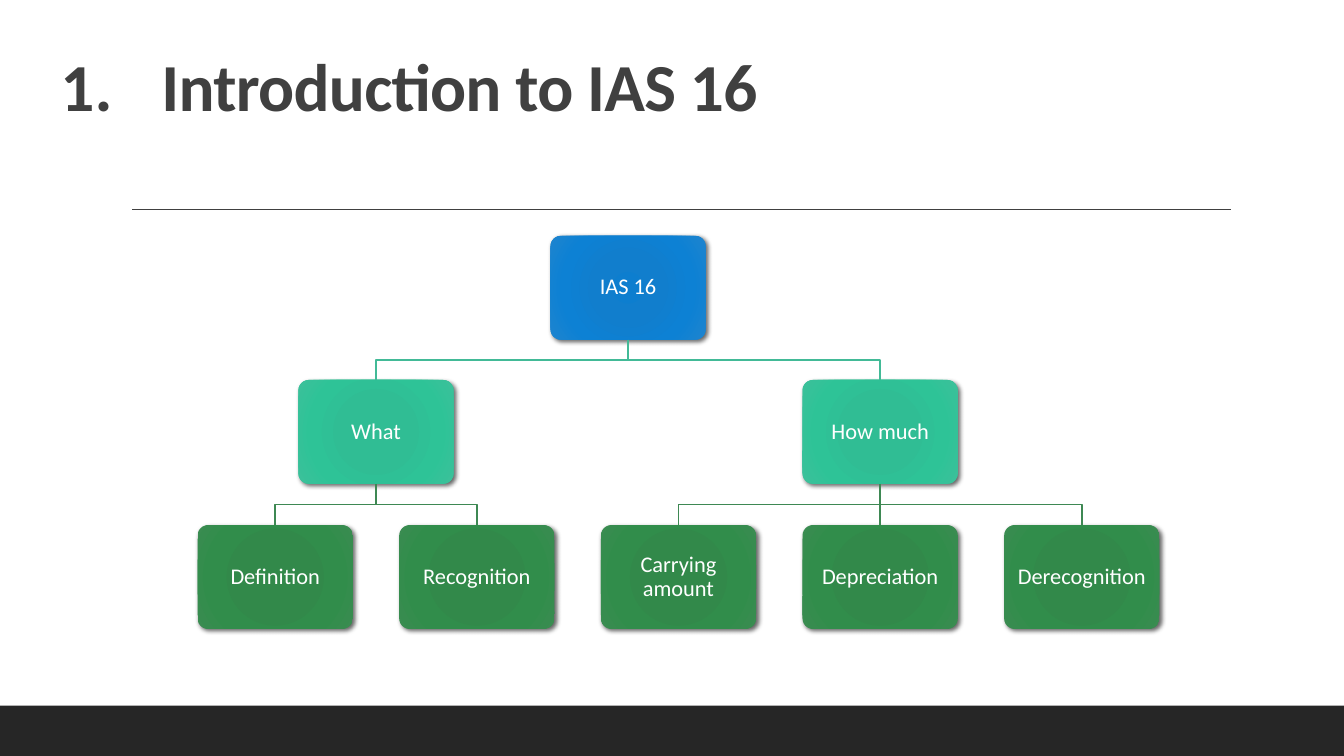
from lxml import etree
from pptx import Presentation
from pptx.dml.color import RGBColor
from pptx.enum.shapes import MSO_CONNECTOR, MSO_SHAPE
from pptx.enum.text import MSO_ANCHOR, MSO_AUTO_SIZE, PP_ALIGN
from pptx.oxml import parse_xml
from pptx.oxml.ns import qn
from pptx.util import Inches, Pt

STRAIGHT = MSO_CONNECTOR.STRAIGHT
RECTANGLE, ROUNDED = MSO_SHAPE.RECTANGLE, MSO_SHAPE.ROUNDED_RECTANGLE
MIDDLE, BOTTOM = MSO_ANCHOR.MIDDLE, MSO_ANCHOR.BOTTOM
LEFT, CENTER = PP_ALIGN.LEFT, PP_ALIGN.CENTER
NO_AUTOFIT = MSO_AUTO_SIZE.NONE
BOTTOM_SIDE, TOP_SIDE = 2, 0

WHITE = RGBColor(0xFF, 0xFF, 0xFF)
DARK_GREY = RGBColor(0x40, 0x40, 0x40)
BAND_GREY = RGBColor(0x26, 0x26, 0x26)
TEAL_LINE = RGBColor(0x42, 0xBA, 0x97)
GREEN_LINE = RGBColor(0x3E, 0x88, 0x53)

# One gradient per level of the tree, and one line colour below each parent level
GRADIENT_STOPS = (0, 34, 70, 100)
LEVEL_GRADIENTS = (
    [RGBColor.from_string(c) for c in ("0D7ECF", "117ECD", "0D81D4", "1E84CE")],
    [RGBColor.from_string(c) for c in ("2DBE94", "30BD94", "2EC397", "3CC09A")],
    [RGBColor.from_string(c) for c in ("2F8949", "32894A", "318D4B", "3A8C51")],
)
LEVEL_LINES = (TEAL_LINE, GREEN_LINE)
LEVEL_TOPS = (2.34, 3.77, 5.21)
BOX_WIDTH, BOX_HEIGHT = 1.54, 1.03
FIRST_LEAF_CENTER, LEAF_PITCH = 2.73, 2

TREE = ("IAS 16", [
    ("What", [("Definition", []), ("Recognition", [])]),
    ("How much", [("Carrying amount", []), ("Depreciation", []), ("Derecognition", [])]),
])

NAMESPACE = 'xmlns:a="http://schemas.openxmlformats.org/drawingml/2006/main"'
SHADOW = (f'<a:effectLst {NAMESPACE}><a:outerShdw blurRad="{Pt(3.5)}" dist="{Pt(2)}" '
          'dir="2700000" algn="ctr" rotWithShape="0"><a:srgbClr val="000000">'
          '<a:alpha val="60000"/></a:srgbClr></a:outerShdw></a:effectLst>')


def set_attributes(target, formats):
    for name, value in formats.items():
        setattr(target, name, value)


def format_font(font, size, color, bold=False):
    set_attributes(font, {"name": "Calibri", "size": Pt(size), "bold": bold})
    font.color.rgb = color


def add_title(slide, text):
    title = slide.shapes.title
    set_attributes(title, {"left": Inches(0.5), "top": Inches(-0.29),
                           "width": Inches(11), "height": Inches(1.59)})
    frame = title.text_frame
    set_attributes(frame, {"text": text, "vertical_anchor": BOTTOM,
                           "word_wrap": True, "auto_size": NO_AUTOFIT})
    paragraph = frame.paragraphs[0]
    set_attributes(paragraph, {"alignment": LEFT, "line_spacing": 0.9})
    # Automatic number with a hanging indent
    properties = paragraph._p.get_or_add_pPr()
    properties.set("marL", str(Inches(1)))
    properties.set("indent", str(Inches(-1)))
    etree.SubElement(properties, qn("a:buAutoNum"), type="arabicPeriod")
    run = paragraph.runs[0]
    format_font(run.font, 48, DARK_GREY, bold=True)
    run._r.get_or_add_rPr().set("spc", "-50")


def add_band(slide):
    band = slide.shapes.add_shape(RECTANGLE, 0, Inches(7), Inches(13.33), Inches(0.5))
    band.shadow.inherit = False
    band.fill.solid()
    band.fill.fore_color.rgb = BAND_GREY
    band.line.fill.background()


def add_line(slide, color, width, start=(0, 0), end=(0, 0)):
    line = slide.shapes.add_connector(STRAIGHT, *map(Inches, start + end))
    line.line.color.rgb = color
    line.line.width = Pt(width)
    etree.SubElement(line._element.spPr, qn("a:effectLst"))
    return line


def add_box(slide, text, center, level):
    box = slide.shapes.add_shape(ROUNDED, Inches(center - BOX_WIDTH / 2),
                                 Inches(LEVEL_TOPS[level]),
                                 Inches(BOX_WIDTH), Inches(BOX_HEIGHT))
    box.adjustments[0] = 0.1
    # Radial gradient and soft shadow
    stops = "".join(f'<a:gs pos="{stop * 1000}"><a:srgbClr val="{color}"/></a:gs>'
                    for stop, color in zip(GRADIENT_STOPS, LEVEL_GRADIENTS[level]))
    box._element.spPr.append(parse_xml(
        f'<a:gradFill {NAMESPACE} rotWithShape="1"><a:gsLst>{stops}</a:gsLst>'
        '<a:path path="circle"><a:fillToRect l="100000" t="100000" r="100000" b="100000"/>'
        '</a:path></a:gradFill>'))
    box.line.fill.background()
    box._element.spPr.append(parse_xml(SHADOW))
    # Label
    frame = box.text_frame
    inset = Inches(0.1)
    set_attributes(frame, {"text": text, "word_wrap": True, "vertical_anchor": MIDDLE,
                           "margin_left": inset, "margin_right": inset,
                           "margin_top": inset, "margin_bottom": inset})
    paragraph = frame.paragraphs[0]
    set_attributes(paragraph, {"alignment": CENTER, "line_spacing": 0.9})
    format_font(paragraph.runs[0].font, 16, WHITE)
    return box


def join_boxes(slide, parent, child, color):
    start_x, end_x = (box.left + box.width // 2 for box in (parent, child))
    start_y, end_y = parent.top + parent.height, child.top
    if abs(start_x - end_x) < Inches(0.01):
        line = add_line(slide, color, 1.25)
        line.begin_connect(parent, BOTTOM_SIDE)
        line.end_connect(child, TOP_SIDE)
        return
    middle_y = (start_y + end_y) // 2
    builder = slide.shapes.build_freeform(start_x, start_y)
    builder.add_line_segments([(start_x, middle_y), (end_x, middle_y), (end_x, end_y)],
                              close=False)
    elbow = builder.convert_to_shape()
    elbow.shadow.inherit = False
    elbow.fill.background()
    elbow.line.color.rgb = color
    elbow.line.width = Pt(1.25)


def add_tree(slide, node, leaf_centers, level=0):
    """Add a node over the middle of its children; return its box and centre."""
    text, children = node
    branches = [add_tree(slide, child, leaf_centers, level + 1) for child in children]
    if branches:
        center = (branches[0][1] + branches[-1][1]) / 2
    else:
        center = next(leaf_centers)
    box = add_box(slide, text, center, level)
    for child_box, _ in branches:
        join_boxes(slide, box, child_box, LEVEL_LINES[level])
    return box, center


def main():
    presentation = Presentation()
    presentation.slide_width = Inches(13.33)
    presentation.slide_height = Inches(7.5)
    slide = presentation.slides.add_slide(presentation.slide_layouts[5])

    # Frame of the page
    add_band(slide)
    add_line(slide, DARK_GREY, 1, (1.31, 2.08), (12.21, 2.08))
    add_title(slide, "Introduction to IAS 16")

    # Topic tree
    leaf_centers = (FIRST_LEAF_CENTER + LEAF_PITCH * index for index in range(5))
    add_tree(slide, TREE, leaf_centers)

    presentation.save("out.pptx")


if __name__ == "__main__":
    main()
